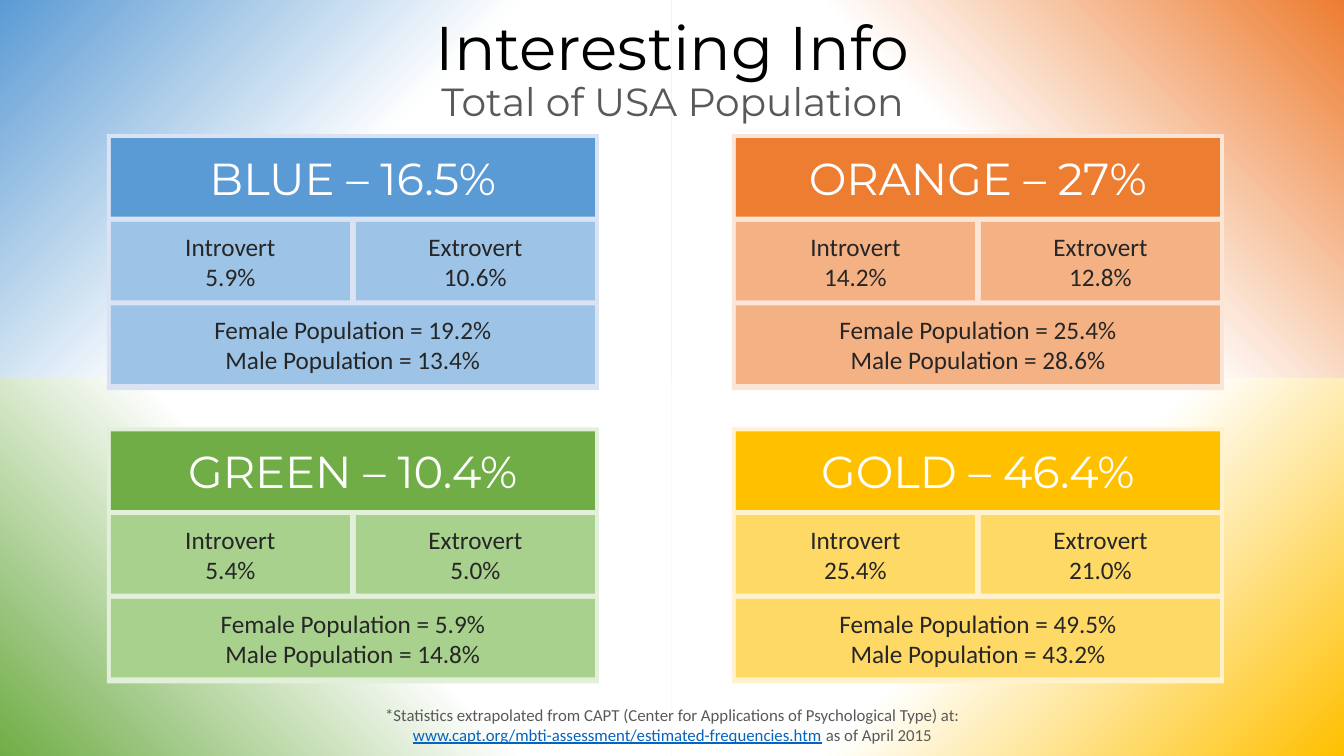
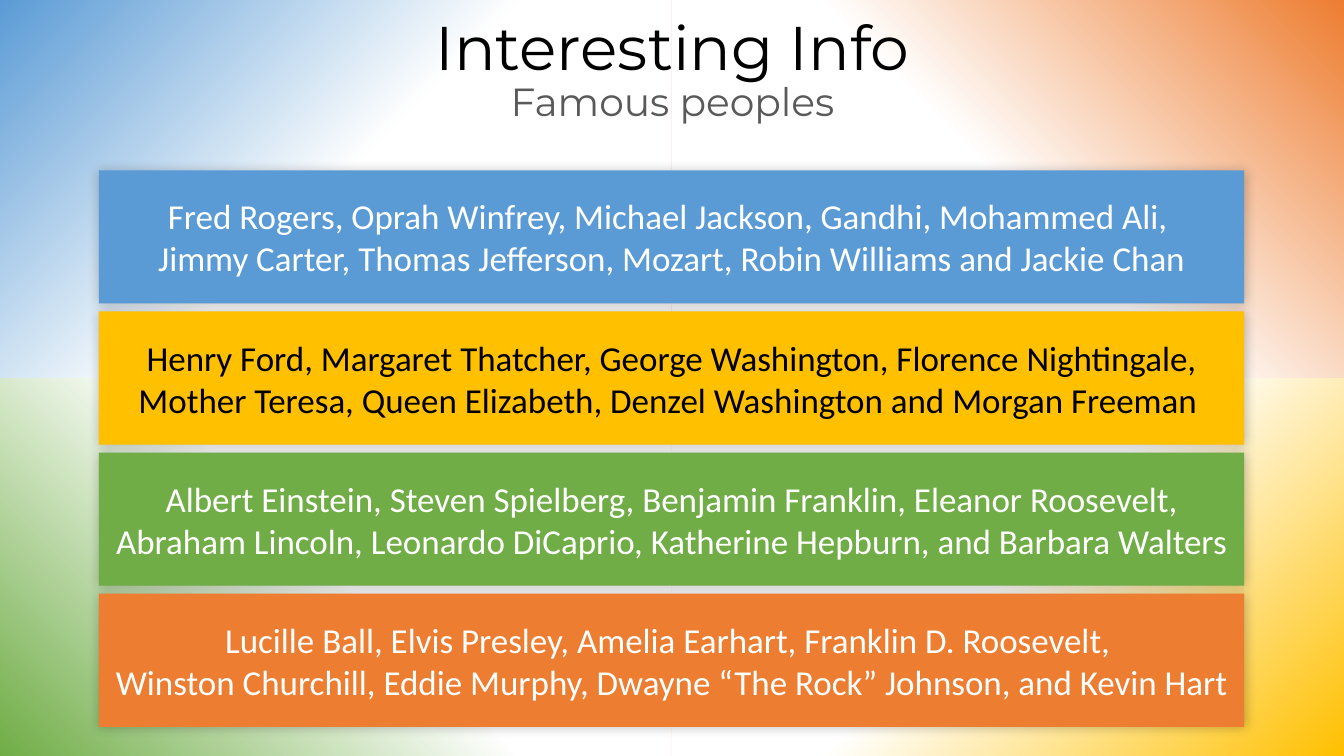
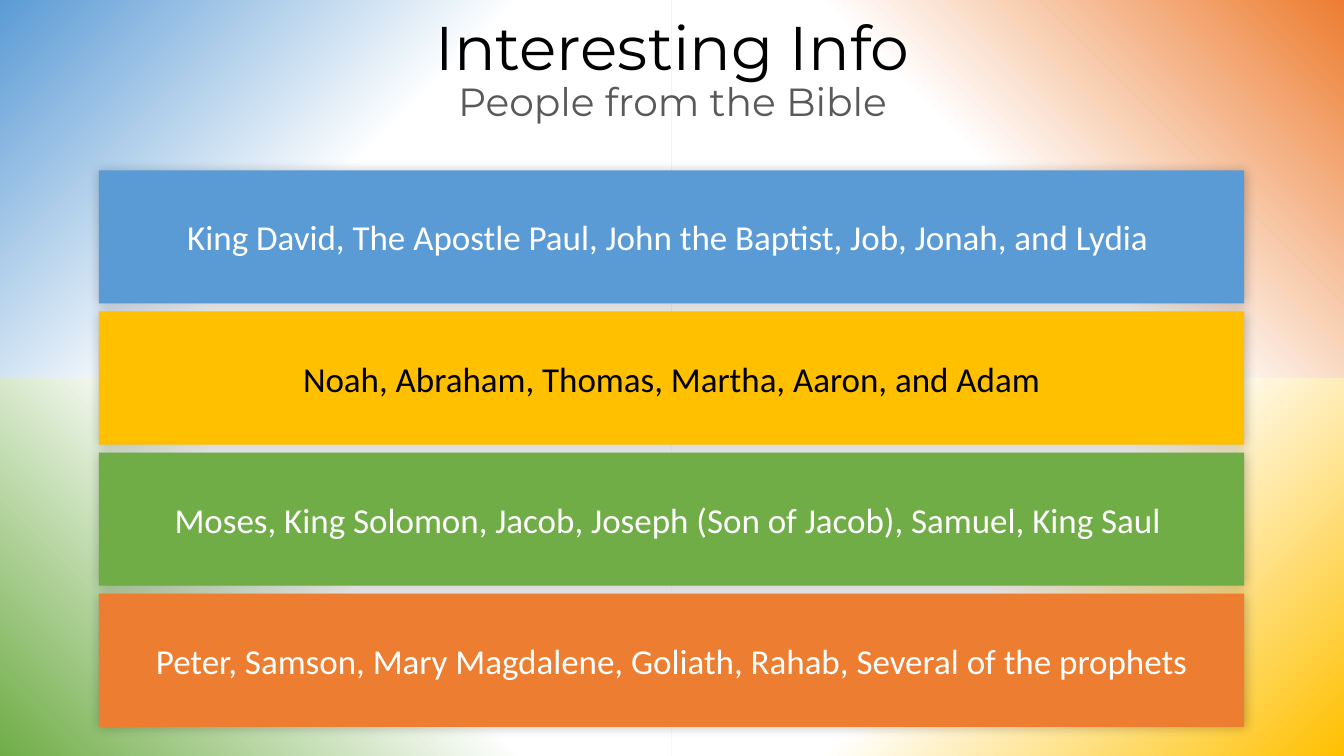
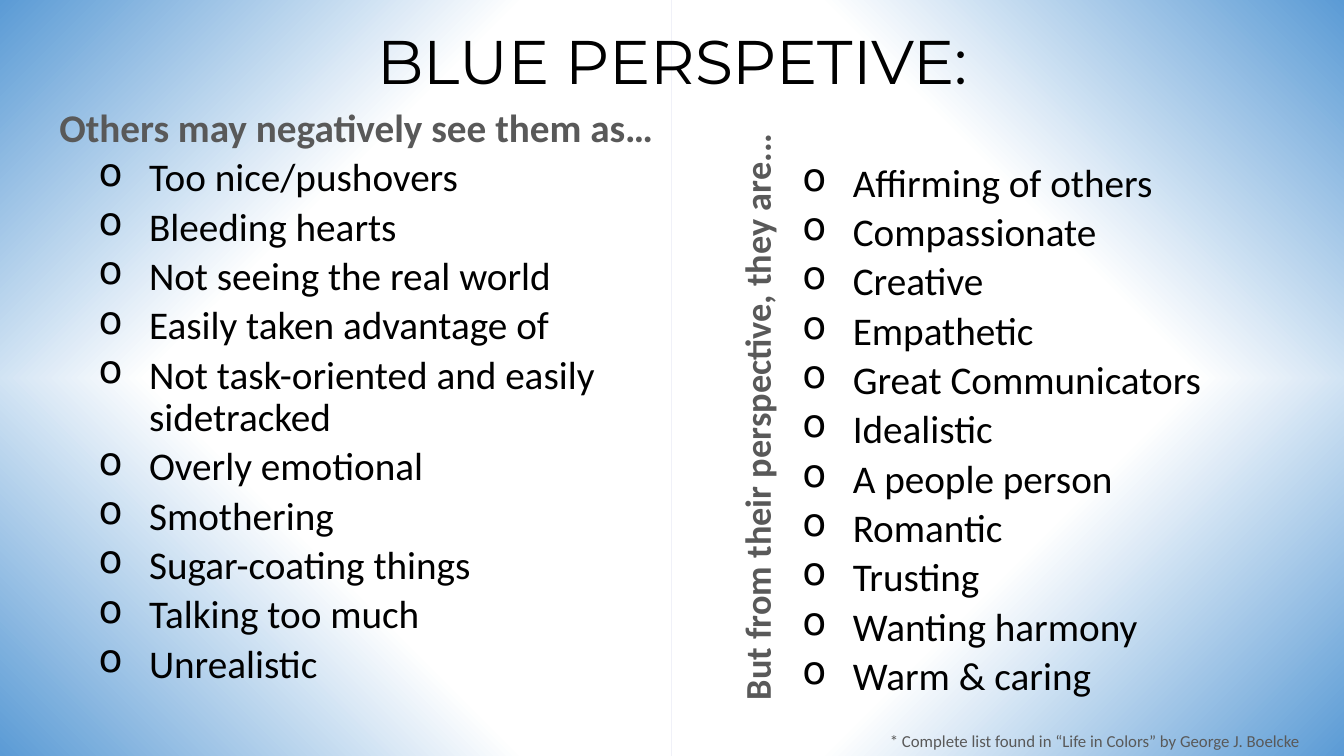
from dataclasses import dataclass
from typing import NamedTuple, Optional

from lxml import etree
from pptx import Presentation
from pptx.dml.color import RGBColor
from pptx.enum import shapes as kinds, text as layout
from pptx.oxml import ns
from pptx.util import Inches, Pt


# Theme: colours, fonts and type sizes
@dataclass(frozen=True)
class Theme:
    blue: str = "5B9BD5"
    orange: str = "ED7D31"
    green: str = "70AD47"
    gold: str = "FFC000"
    white: str = "FFFFFF"
    black: str = "000000"
    dark: str = "262626"
    grey: str = "595959"
    link: str = "0563C1"
    heading_font: str = "Montserrat"
    body_font: str = "Calibri"
    title_size: float = 44
    card_title_size: float = 32
    list_size: float = 28
    side_size: float = 25.9
    bar_size: float = 25
    card_size: float = 18
    note_size: float = 12
    tight: float = 0.9


THEME = Theme()
WIDTH, HEIGHT = 13.33, 7.5


class Box(NamedTuple):
    left: float
    top: float
    width: float
    height: float


class TextStyle(NamedTuple):
    size: float
    color: str
    font: str = THEME.body_font
    bold: bool = False
    centered: bool = True
    line_spacing: Optional[float] = None
    space_before: float = 0
    bullet: Optional[str] = None


class Card(NamedTuple):
    title: str
    color: str
    cell_color: str
    frame_color: str
    introvert: str
    extrovert: str
    female: str
    male: str


TITLE = TextStyle(THEME.title_size, THEME.black, THEME.heading_font,
                  line_spacing=THEME.tight)
SUBTITLE = TITLE._replace(size=THEME.list_size, color=THEME.grey)
CARD_TITLE = TextStyle(THEME.card_title_size, THEME.white, THEME.heading_font)
CARD_TEXT = TextStyle(THEME.card_size, THEME.dark)
NOTE = TextStyle(THEME.note_size, THEME.grey)
LIST_HEADING = TextStyle(THEME.list_size, THEME.grey, bold=True, centered=False,
                         line_spacing=THEME.tight)
LIST_ITEM = LIST_HEADING._replace(color=THEME.black, bold=False,
                                  space_before=5, bullet="o")

# Slide content
CARDS = (
    Card("BLUE – 16.5%", THEME.blue, "9DC3E6", "DAE3F3",
         "5.9%", "10.6%", "19.2%", "13.4%"),
    Card("ORANGE – 27%", THEME.orange, "F4B183", "FBE5D6",
         "14.2%", "12.8%", "25.4%", "28.6%"),
    Card("GREEN – 10.4%", THEME.green, "A9D18E", "E2F0D9",
         "5.4%", "5.0%", "5.9%", "14.8%"),
    Card("GOLD – 46.4%", THEME.gold, "FFD966", "FFF2CC",
         "25.4%", "21.0%", "49.5%", "43.2%"),
)
FAMOUS = (
    "Fred Rogers, Oprah Winfrey, Michael Jackson, Gandhi, Mohammed Ali, \n"
    "Jimmy Carter, Thomas Jefferson, Mozart, Robin Williams and Jackie Chan",
    "Henry Ford, Margaret Thatcher, George Washington, Florence Nightingale, "
    "Mother Teresa, Queen Elizabeth, Denzel Washington and Morgan Freeman ",
    "Albert Einstein, Steven Spielberg, Benjamin Franklin, Eleanor Roosevelt, "
    "Abraham Lincoln, Leonardo DiCaprio, Katherine Hepburn, and Barbara Walters",
    "Lucille Ball, Elvis Presley, Amelia Earhart, Franklin D. Roosevelt, \n"
    "Winston Churchill, Eddie Murphy, Dwayne “The Rock” Johnson, and Kevin Hart",
)
BIBLICAL = (
    "King David, The Apostle Paul, John the Baptist, Job, Jonah, and Lydia ",
    "Noah, Abraham, Thomas, Martha, Aaron, and Adam",
    "Moses, King Solomon, Jacob, Joseph (Son of Jacob), Samuel, King Saul ",
    "Peter, Samson, Mary Magdalene, Goliath, Rahab, Several of the prophets",
)
NEGATIVES = (
    "Too nice/pushovers", "Bleeding hearts", "Not seeing the real world",
    "Easily taken advantage of", "Not task-oriented and easily sidetracked",
    "Overly emotional", "Smothering", "Sugar-coating things",
    "Talking too much", "Unrealistic",
)
POSITIVES = (
    "Affirming of others", "Compassionate", "Creative", "Empathetic",
    "Great Communicators", "Idealistic", "A people person", "Romantic",
    "Trusting", "Wanting harmony", "Warm & caring",
)


# Drawing helpers
def rgb(color: str) -> RGBColor:
    return RGBColor.from_string(color)


def place(box: Box) -> tuple:
    return tuple(Inches(length) for length in box)


def format_paragraph(paragraph, style: TextStyle, first: bool) -> None:
    if style.bullet:
        properties = paragraph._p.get_or_add_pPr()
        properties.set("marL", str(Inches(0.89)))
        properties.set("indent", str(Inches(-0.5)))
        etree.SubElement(properties, ns.qn("a:buChar")).set("char", style.bullet)
    paragraph.alignment = (layout.PP_ALIGN.CENTER if style.centered
                           else layout.PP_ALIGN.LEFT)
    if style.line_spacing:
        paragraph.line_spacing = style.line_spacing
    paragraph.space_before = Pt(0 if first else style.space_before)
    font = paragraph.font
    font.name, font.size, font.bold = style.font, Pt(style.size), style.bold
    font.color.rgb = rgb(style.color)


def write(shape, lines, style: TextStyle, middle: bool = True,
          heading: Optional[TextStyle] = None) -> None:
    """Fill a shape with paragraphs; heading styles the first one."""
    frame = shape.text_frame
    frame.word_wrap = True
    frame.vertical_anchor = (layout.MSO_ANCHOR.MIDDLE if middle
                             else layout.MSO_ANCHOR.TOP)
    for index, line in enumerate(lines):
        paragraph = frame.add_paragraph() if index else frame.paragraphs[0]
        paragraph.text = line
        line_style = heading if heading and index == 0 else style
        format_paragraph(paragraph, line_style, index == 0)


def add_text(slide, box: Box, lines, style: TextStyle, middle: bool = False,
             heading: Optional[TextStyle] = None):
    shape = slide.shapes.add_textbox(*place(box))
    write(shape, lines, style, middle, heading)
    return shape


def add_rectangle(shapes, box: Box, color: Optional[str] = None):
    shape = shapes.add_shape(kinds.MSO_SHAPE.RECTANGLE, *place(box))
    shape.shadow.inherit = False
    shape.line.fill.background()
    if color:
        shape.fill.solid()
        shape.fill.fore_color.rgb = rgb(color)
    return shape


def add_glow(shape) -> None:
    """Soft dark shadow, evenly around the shape."""
    effects = shape._element.spPr.find(ns.qn("a:effectLst"))
    shadow = etree.SubElement(effects, ns.qn("a:outerShdw"), blurRad=str(Pt(8)),
                              dist="0", dir="0", algn="ctr", rotWithShape="0")
    color = etree.SubElement(shadow, ns.qn("a:srgbClr"), val=THEME.black)
    etree.SubElement(color, ns.qn("a:alpha"), val="25000")


# Shared slide parts
def add_slide(presentation, corner_colors):
    """Blank slide with a gradient running in from each corner."""
    slide = presentation.slides.add_slide(presentation.slide_layouts[6])
    slide.background.fill.solid()
    slide.background.fill.fore_color.rgb = rgb(THEME.black)
    quarters = slide.shapes.add_group_shape().shapes
    for index, (color, angle) in enumerate(zip(corner_colors, (315, 225, 45, 135))):
        row, column = divmod(index, 2)
        quarter = add_rectangle(quarters, Box(column * WIDTH / 2, row * HEIGHT / 2,
                                              WIDTH / 2, HEIGHT / 2))
        quarter.fill.gradient()
        quarter.fill.gradient_angle = angle
        stops = zip(quarter.fill.gradient_stops, (color, THEME.white), (0, 0.5))
        for stop, stop_color, position in stops:
            stop.color.rgb = rgb(stop_color)
            stop.position = position
    return slide


def add_info_slide(presentation, subtitle: str):
    slide = add_slide(presentation,
                      (THEME.blue, THEME.orange, THEME.green, THEME.gold))
    add_text(slide, Box(0.92, 0.05, 11.5, 0.91), ["Interesting Info"], TITLE, True)
    add_text(slide, Box(0.92, 0.57, 11.5, 0.91), [subtitle], SUBTITLE, True)
    return slide


# Slide 1: population cards
def add_card(slide, card: Card, left: float, top: float) -> None:
    padding, full, half, height, gap = 0.04, 4.8, 2.37, 0.78, 0.05
    shapes = slide.shapes.add_group_shape().shapes
    add_rectangle(shapes, Box(left, top, 4.88, 2.54), card.frame_color)
    start = left + padding
    cells = (
        (0, start, full, card.color, CARD_TITLE, [card.title]),
        (1, start, half, card.cell_color, CARD_TEXT, ["Introvert", card.introvert]),
        (1, start + full - half, half, card.cell_color, CARD_TEXT,
         ["Extrovert", card.extrovert]),
        (2, start, full, card.cell_color, CARD_TEXT,
         [f"Female Population = {card.female}", f"Male Population = {card.male}"]),
    )
    for row, cell_left, width, color, style, lines in cells:
        cell_top = top + padding + row * (height + gap)
        cell = add_rectangle(shapes, Box(cell_left, cell_top, width, height), color)
        write(cell, lines, style)


def build_population(presentation) -> None:
    slide = add_info_slide(presentation, "Total of USA Population")
    for index, card in enumerate(CARDS):
        row, column = divmod(index, 2)
        add_card(slide, card, 1.06 + column * 6.2, 1.33 + row * 2.91)
    note = add_text(slide, Box(3.09, 6.94, 7.16, 0.5), [
        "*Statistics extrapolated from CAPT "
        "(Center for Applications of Psychological Type) at:", ""], NOTE)
    source = note.text_frame.paragraphs[1]
    address = source.add_run()
    address.text = "www.capt.org/mbti-assessment/estimated-frequencies.htm"
    address.font.underline = True
    address.font.color.rgb = rgb(THEME.link)
    source.add_run().text = " as of April 2015"


# Slides 2 and 3: one bar of names per colour
def build_names(presentation, subtitle: str, names) -> None:
    slide = add_info_slide(presentation, subtitle)
    colors = (THEME.blue, THEME.gold, THEME.green, THEME.orange)
    for index, (color, line) in enumerate(zip(colors, names)):
        bar = add_rectangle(slide.shapes,
                            Box(0.98, 1.69 + index * 1.4, 11.36, 1.32), color)
        add_glow(bar)
        text_color = THEME.black if color == THEME.gold else THEME.white
        write(bar, [line], TextStyle(THEME.bar_size, text_color))


# Slide 4: two views of one colour
def build_perspective(presentation) -> None:
    slide = add_slide(presentation, [THEME.blue] * 4)
    add_text(slide, Box(0.92, 0.21, 11.5, 0.87), ["BLUE PERSPETIVE:"], TITLE, True)
    add_text(slide, Box(0.49, 1.03, 6.27, 6.28),
             ["Others may negatively see them as…", *NEGATIVES],
             LIST_ITEM, heading=LIST_HEADING)
    add_text(slide, Box(7.47, 1.57, 5.34, 5.74), POSITIVES, LIST_ITEM)
    side = add_text(slide, Box(4.45, 3.61, 6.27, 0.6),
                    ["But from their perspective, they are..."],
                    LIST_HEADING._replace(size=THEME.side_size))
    side.rotation = 270
    add_text(slide, Box(7.28, 7.2, 7.16, 0.3),
             ["* Complete list found in “Life in Colors” by George J. Boelcke"], NOTE)


def main() -> None:
    presentation = Presentation()
    presentation.slide_width = Inches(WIDTH)
    presentation.slide_height = Inches(HEIGHT)
    build_population(presentation)
    build_names(presentation, "Famous peoples", FAMOUS)
    build_names(presentation, "People from the Bible", BIBLICAL)
    build_perspective(presentation)
    presentation.save("out.pptx")


if __name__ == "__main__":
    main()
